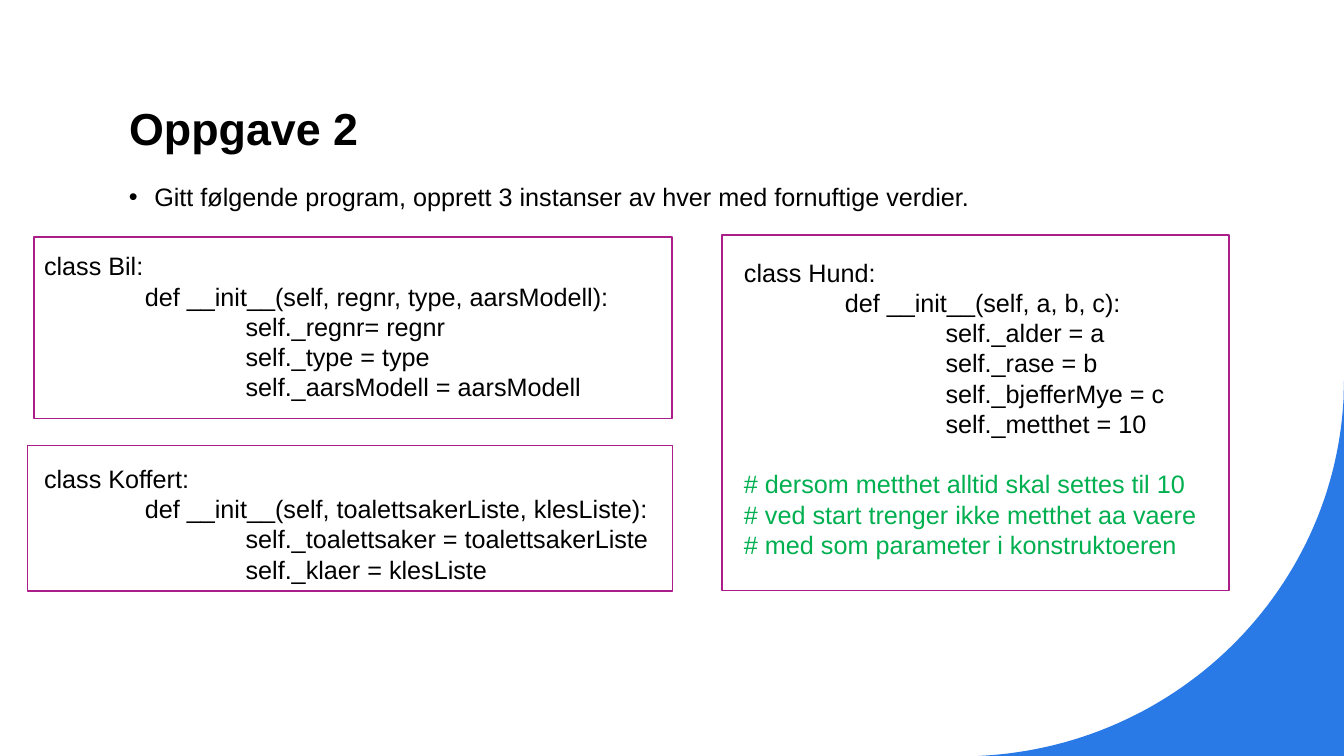
from pptx import Presentation
from pptx.dml.color import RGBColor
from pptx.enum.text import MSO_ANCHOR, PP_ALIGN
from pptx.oxml.xmlchemy import OxmlElement
from pptx.util import Cm, Pt

WIDE, HIGH = 33.87, 19.05
CURVE = [(24.66, HIGH), (29.64, 18.82), (33.6, 14.91), (33.86, 10.06)]
STEPS = 60

BIL = """class Bil:
\tdef __init__(self, regnr, type, aarsModell):
\t\tself._regnr= regnr
\t\tself._type = type
\t\tself._aarsModell = aarsModell"""
KOFFERT = """class Koffert:
\tdef __init__(self, toalettsakerListe, klesListe):
\t\tself._toalettsaker = toalettsakerListe
\t\tself._klaer = klesListe"""
HUND = """class Hund:
\tdef __init__(self, a, b, c):
\t\tself._alder = a
\t\tself._rase = b
\t\tself._bjefferMye = c
\t\tself._metthet = 10
# dersom metthet alltid skal settes til 10
# ved start trenger ikke metthet aa vaere
# med som parameter i konstruktoeren"""
PANELS = [
    ((0.86, 5.97, 16.08, 4.57), (0.86, 6.19, 16.08, 4.11), BIL),
    ((0.69, 11.23, 16.26, 3.66), (0.86, 11.55, 16.08, 3.33), KOFFERT),
    ((18.2, 5.92, 12.77, 8.96), (18.5, 6.35, 12.14, 7.95), HUND),
]


def color(code):
    """Turn a hex string into a colour."""
    return RGBColor.from_string(code)


def assign(item, values):
    """Set each attribute named in a dict of format values."""
    for name, value in values.items():
        setattr(item, name, value)


def bend(t):
    """Give the point at t on the corner curve."""
    parts = ((1 - t) ** 3, 3 * t * (1 - t) ** 2, 3 * t * t * (1 - t), t ** 3)
    return tuple(Cm(sum(k * p[axis] for k, p in zip(parts, CURVE))) for axis in (0, 1))


class Deck:
    """Hold the style and the current slide."""

    ink, frame, note, fill = "000000", "AB1E89", "00B050", "2979E7"
    font, size, line, tab = "Arial", 18, Pt(21.6), Cm(2.54)

    def __init__(self, slide):
        """Keep the slide to draw on."""
        self.slide = slide

    def style(self, par, code, layout, **font):
        """Format one paragraph and its font."""
        assign(par, {"alignment": PP_ALIGN.LEFT, **layout})
        assign(par.font, {"name": self.font, "size": Pt(self.size), **font})
        par.font.color.rgb = color(code)

    def title(self, text, box):
        """Place and format the title."""
        shape = self.slide.shapes.title
        assign(shape, dict(zip(("left", "top", "width", "height"), map(Cm, box))))
        assign(shape.text_frame, {"text": text, "word_wrap": True,
                                  "vertical_anchor": MSO_ANCHOR.BOTTOM})
        self.style(shape.text_frame.paragraphs[0], self.ink, {"line_spacing": 1.1},
                   size=Pt(32), bold=True)

    def text(self, text, box):
        """Add a wrapped text box and return its paragraphs."""
        frame = self.slide.shapes.add_textbox(*map(Cm, box)).text_frame
        assign(frame, {"text": text, "word_wrap": True})
        return frame.paragraphs

    def bullet(self, text, box):
        """Add a bulleted line."""
        par = self.text(text, box)[0]
        self.style(par, self.ink, {"line_spacing": 1.2, "space_before": Pt(10)})
        props = par._p.get_or_add_pPr()
        props.set("marL", str(Cm(0.64)))
        props.set("indent", str(Cm(-0.64)))
        for tag, key, value in (("a:buFont", "typeface", self.font),
                                ("a:buChar", "char", "•")):
            mark = OxmlElement(tag)
            mark.set(key, value)
            props.insert_element_before(mark, "a:tabLst", "a:defRPr", "a:extLst")

    def code(self, text, box):
        """Add program text, with its remarks set apart in green."""
        apart = self.line
        for par in self.text(text, box):
            layout = {"line_spacing": self.line}
            remark = par.text.startswith("#")
            if remark:
                layout["space_before"] = apart
                apart = Pt(0)
            self.style(par, self.note if remark else self.ink, layout)
            par._p.get_or_add_pPr().set("defTabSz", str(self.tab))

    def panel(self, box):
        """Add an outlined, unfilled rectangle."""
        shape = self.slide.shapes.add_shape(1, *map(Cm, box))
        shape.shadow.inherit = False
        shape.fill.background()
        shape.line.color.rgb = color(self.frame)
        shape.line.width = Pt(1)

    def corner(self):
        """Fill the corner below the curve."""
        form = self.slide.shapes.build_freeform(*bend(0), scale=1.0)
        form.add_line_segments([bend(i / STEPS) for i in range(1, STEPS + 1)]
                               + [(Cm(WIDE), Cm(9.6)), (Cm(WIDE), Cm(HIGH))])
        shape = form.convert_to_shape()
        shape.shadow.inherit = False
        shape.fill.solid()
        shape.fill.fore_color.rgb = color(self.fill)
        shape.line.fill.background()


def main():
    """Build and save the slide."""
    show = Presentation()
    assign(show, {"slide_width": Cm(WIDE), "slide_height": Cm(HIGH)})
    deck = Deck(show.slides.add_slide(show.slide_layouts[5]))
    deck.corner()
    deck.title("Oppgave 2", (3, 2, 27.64, 2.02))
    deck.bullet("Gitt følgende program, opprett 3 instanser av hver med fornuftige verdier.",
                (3, 4.29, 27.64, 1.45))
    for frame, box, text in PANELS:
        deck.panel(frame)
        deck.code(text, box)
    show.save("out.pptx")


if __name__ == "__main__":
    main()
